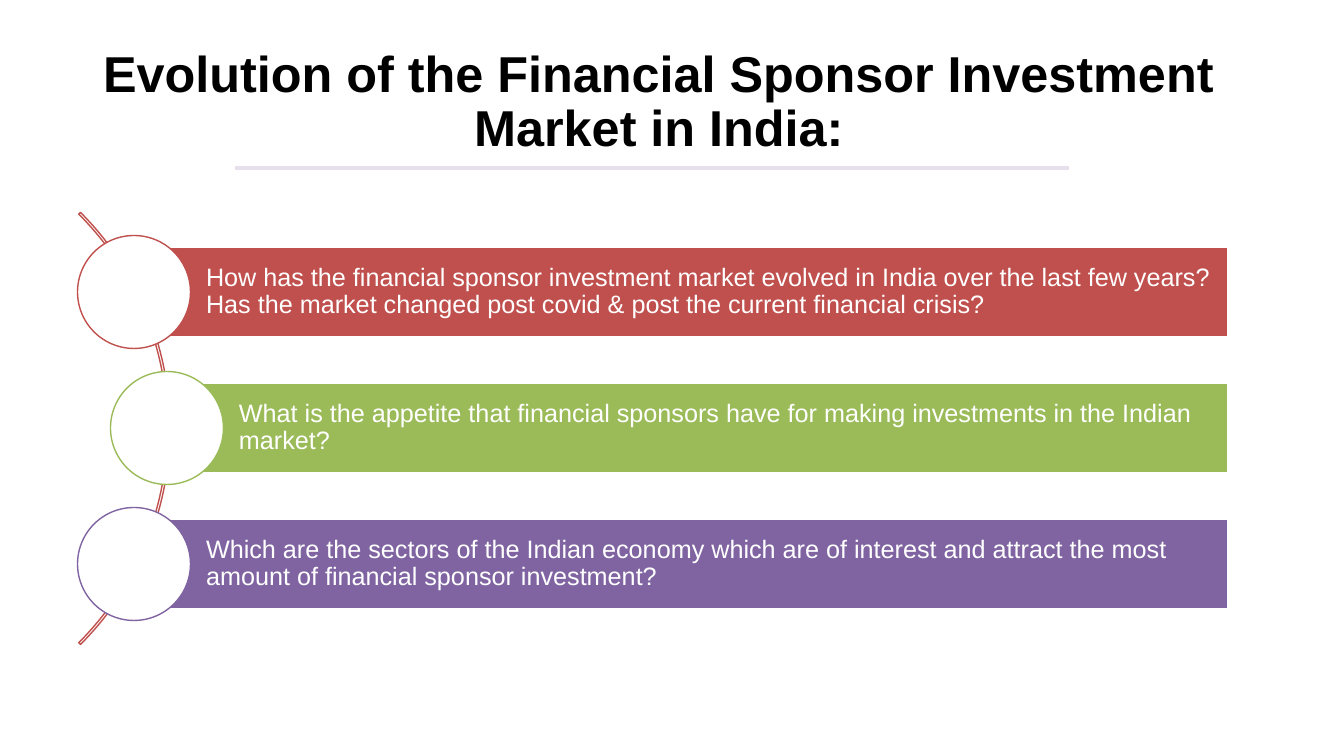
"""Build a slide of questions on the financial sponsor market in India."""
from lxml import etree
from pptx import Presentation
from pptx.dml.color import RGBColor
from pptx.enum.shapes import MSO_CONNECTOR, MSO_SHAPE
from pptx.enum.text import MSO_ANCHOR, PP_ALIGN
from pptx.oxml.ns import qn
from pptx.util import Pt

RECT, OVAL, ARC = MSO_SHAPE.RECTANGLE, MSO_SHAPE.OVAL, MSO_SHAPE.BLOCK_ARC
STRAIGHT = MSO_CONNECTOR.STRAIGHT
MIDDLE = MSO_ANCHOR.MIDDLE
LEFT, CENTER = PP_ALIGN.LEFT, PP_ALIGN.CENTER

BLACK = RGBColor(0x00, 0x00, 0x00)
WHITE = RGBColor(0xFF, 0xFF, 0xFF)
RED = RGBColor(0xC0, 0x50, 0x4D)
GREEN = RGBColor(0x9B, 0xBB, 0x59)
PURPLE = RGBColor(0x80, 0x64, 0xA2)
LAVENDER = RGBColor(0xE6, 0xE0, 0xEC)

TITLE = "Evolution of the Financial Sponsor Investment Market in India:"
QUESTIONS = [
    ("How has the financial sponsor investment market evolved in India over "
     "the last few years? Has the market changed post covid & post the "
     "current financial crisis?", RED, 134),
    ("What is the appetite that financial sponsors have for making "
     "investments in the Indian market?", GREEN, 167),
    ("Which are the sectors of the Indian economy which are of interest and "
     "attract the most amount of financial sponsor investment?", PURPLE, 134),
]

BAR_RIGHT, BAR_H = 1228, 90
FIRST_CENTER, PITCH = 292, 136
CIRCLE = 113
ARC_BOX = (-441, 123, 611, 611)
ARC_ADJUSTMENTS = (189, 27, 0.004)


def px(n):
    return round(n * 914400 / 100.8)


def add_shape(s, kind, box, fill, line):
    sp = s.shapes.add_shape(kind, *map(px, box))
    sp.shadow.inherit = False
    if fill is None:
        sp.fill.background()
    else:
        sp.fill.solid()
        sp.fill.fore_color.rgb = fill
    sp.line.color.rgb = line
    sp.line.width = Pt(1)
    return sp


def set_text(sp, text, size, color, bold, align, insets):
    tf = sp.text_frame
    tf.word_wrap = True
    tf.vertical_anchor = MIDDLE
    tf.margin_left, tf.margin_top, tf.margin_right, tf.margin_bottom = map(px, insets)
    p = tf.paragraphs[0]
    p.text = text
    p.alignment = align
    p.line_spacing = 0.9
    p.font.name = "Arial"
    p.font.size = Pt(size)
    p.font.bold = bold
    p.font.color.rgb = color


def main():
    prs = Presentation()
    prs.slide_width, prs.slide_height = px(1344), px(756)
    s = prs.slides.add_slide(prs.slide_layouts[6])

    arc = add_shape(s, ARC, ARC_BOX, None, RED)
    for i, value in enumerate(ARC_ADJUSTMENTS):
        arc.adjustments[i] = value

    for i, (question, color, left) in enumerate(QUESTIONS):
        center = FIRST_CENTER + i * PITCH
        bar = add_shape(s, RECT, (left, center - BAR_H / 2, BAR_RIGHT - left, BAR_H),
                        color, WHITE)
        set_text(bar, question, 18, WHITE, False, LEFT, (72, 5, 5, 5))
        add_shape(s, OVAL, (left - CIRCLE / 2, center - CIRCLE / 2, CIRCLE, CIRCLE),
                  WHITE, color)

    title = s.shapes.add_textbox(px(78), px(42), px(1162), px(122))
    set_text(title, TITLE, 36, BLACK, True, CENTER, (10, 5, 10, 5))

    rule = s.shapes.add_connector(STRAIGHT, px(235), px(168), px(1069), px(168))
    rule.line.color.rgb = LAVENDER
    rule.line.width = Pt(3)
    etree.SubElement(rule.element.spPr, qn("a:effectLst"))

    prs.save("out.pptx")


if __name__ == "__main__":
    main()
